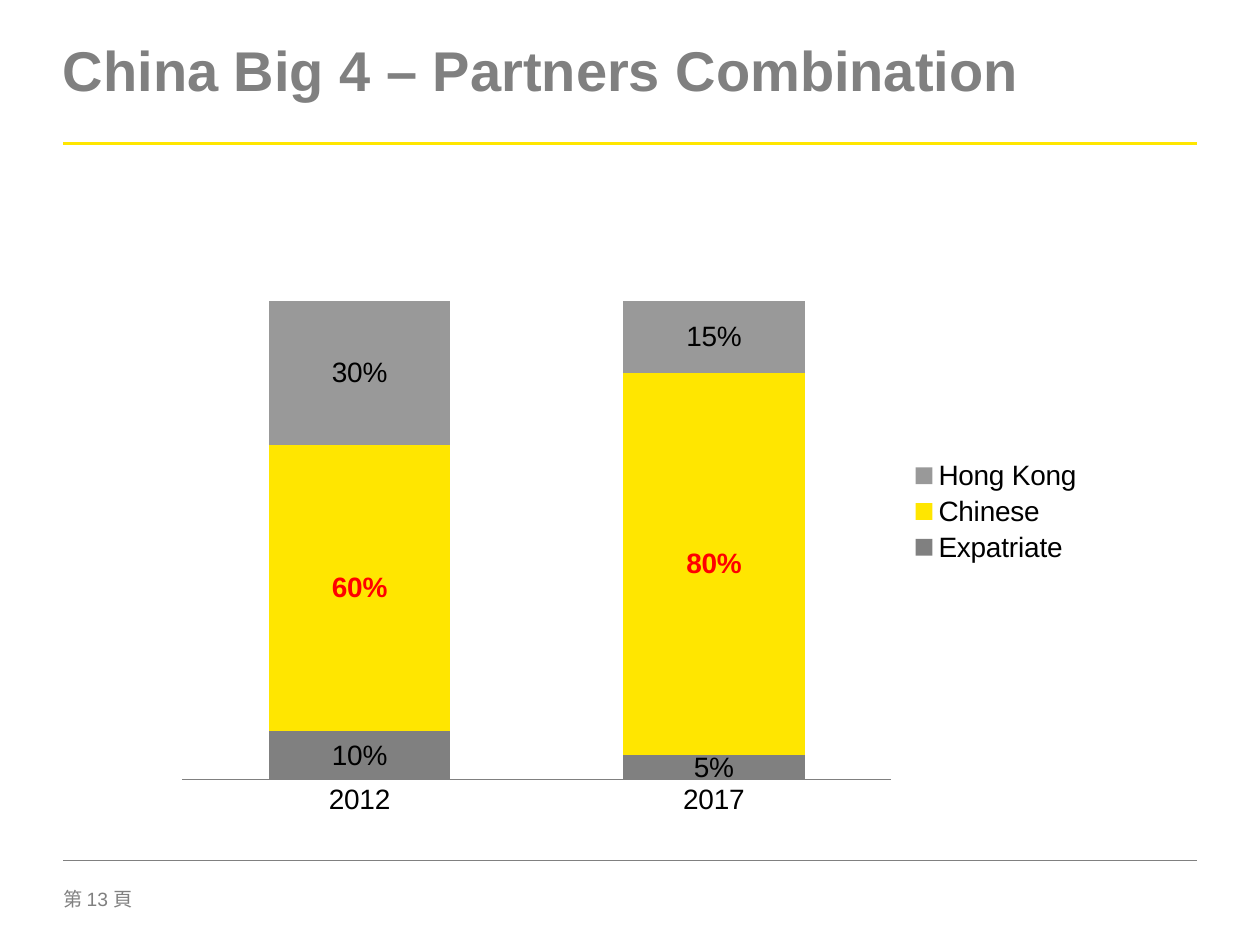
import pptx
import pptx.chart.data
import pptx.dml.color
import pptx.enum.chart
import pptx.enum.shapes
import pptx.enum.text
import pptx.oxml
import pptx.oxml.ns
import pptx.util

Pt = pptx.util.Pt
GREY, GOLD = "808080", "FFE600"
CJK = "Noto Sans CJK SC"


def tint(code):
    """Turn a hex string into a colour."""
    return pptx.dml.color.RGBColor.from_string(code)


def style(font, size, code, bold=False, name="Arial"):
    """Set the face, size, colour and weight of a font."""
    font.name, font.size, font.bold = name, Pt(size), bold
    font.color.rgb = tint(code)


def write(slide, box, runs, size, bold=False, space=1.0):
    """Add a text box of one line made of (text, face) runs."""
    frame = slide.shapes.add_textbox(*map(Pt, box)).text_frame
    frame.word_wrap = True
    frame.margin_left = frame.margin_right = 0
    frame.margin_top = frame.margin_bottom = 0
    frame.vertical_anchor = pptx.enum.text.MSO_ANCHOR.MIDDLE
    para = frame.paragraphs[0]
    para.line_spacing = space
    for text, face in runs:
        run = para.add_run()
        run.text = text
        style(run.font, size, GREY, bold, face)
        east = pptx.oxml.ns.qn("a:ea")
        run.font._element.get_or_add_latin().addnext(
            run.font._element.makeelement(east, {"typeface": face}))


def rule(slide, top, code, width):
    """Draw a line across the slide between the margins."""
    kind = pptx.enum.shapes.MSO_CONNECTOR.STRAIGHT
    line = slide.shapes.add_connector(kind, Pt(36), Pt(top), Pt(684), Pt(top))
    line.line.color.rgb = tint(code)
    line.line.width = Pt(width)
    line._element.spPr.append(pptx.oxml.parse_xml(
        f'<a:effectLst {pptx.oxml.ns.nsdecls("a")}/>'))


def place(chart, x, y, w, h):
    """Fix the inner plot area as shares of the chart."""
    area = chart._chartSpace.chart.plotArea
    for old in area.findall(pptx.oxml.ns.qn("c:layout")):
        area.remove(old)
    parts = "".join(f'<c:{key} val="{val}"/>' for key, val in
                    zip(("x", "y", "w", "h"), (x, y, w, h)))
    area.insert(0, pptx.oxml.parse_xml(
        f'<c:layout {pptx.oxml.ns.nsdecls("c")}><c:manualLayout>'
        '<c:layoutTarget val="inner"/><c:xMode val="edge"/>'
        f'<c:yMode val="edge"/>{parts}</c:manualLayout></c:layout>'))


def label(series, fill, code, bold):
    """Colour a series and show its values in the bars."""
    series.format.fill.solid()
    series.format.fill.fore_color.rgb = tint(fill)
    tags = series.data_labels
    tags.show_value = True
    tags.number_format, tags.number_format_is_linked = "0%", False
    tags.position = pptx.enum.chart.XL_LABEL_POSITION.CENTER
    style(tags.font, 16, code, bold)


def stack(slide):
    """Add the stacked columns of partner shares."""
    enum = pptx.enum.chart
    rows = [("Expatriate", (0.1, 0.05), GREY, "000000", False),
            ("Chinese", (0.6, 0.8), GOLD, "FF0000", True),
            ("Hong Kong", (0.3, 0.15), "999999", "000000", False)]
    data = pptx.chart.data.CategoryChartData(number_format="0%")
    data.categories = ["2012", "2017"]
    for name, vals, *_ in rows:
        data.add_series(name, vals)
    chart = slide.shapes.add_chart(
        enum.XL_CHART_TYPE.COLUMN_STACKED,
        Pt(93.6), Pt(110.16), Pt(532.8), Pt(364.32), data).chart
    style(chart.font, 16, "000000")
    chart.has_title = False
    chart.has_legend = True
    chart.legend.position = enum.XL_LEGEND_POSITION.RIGHT
    chart.legend.include_in_layout = False
    base, value = chart.category_axis, chart.value_axis
    base.major_tick_mark = enum.XL_TICK_MARK.NONE
    base.format.line.color.rgb = tint(GREY)
    base.format.line.width = Pt(0.75)
    value.minimum_scale, value.maximum_scale = 0, 1.2
    value.has_major_gridlines = False
    value.visible = False
    plot = chart.plots[0]
    plot.gap_width, plot.overlap = 95, 100
    plot.vary_by_categories = False
    for series, (_, _, fill, code, bold) in zip(plot.series, rows):
        label(series, fill, code, bold)
    place(chart, 0.02, 0.02, 0.76, 0.9)


def main():
    """Build the slide and save it."""
    deck = pptx.Presentation()
    deck.slide_width, deck.slide_height = Pt(720), Pt(540)
    slide = deck.slides.add_slide(deck.slide_layouts[6])
    write(slide, (36, 505.44, 56.88, 15.84),
          [("第 ", CJK), ("13 ", "Arial"), ("頁", CJK)], 11)
    rule(slide, 82.08, GOLD, 1.5)
    rule(slide, 491.76, GREY, 0.25)
    write(slide, (36, 0, 648, 59.76),
          [("China Big 4 – Partners Combination", "Arial")], 32, True, 1.5)
    stack(slide)
    deck.save("out.pptx")


if __name__ == "__main__":
    main()
